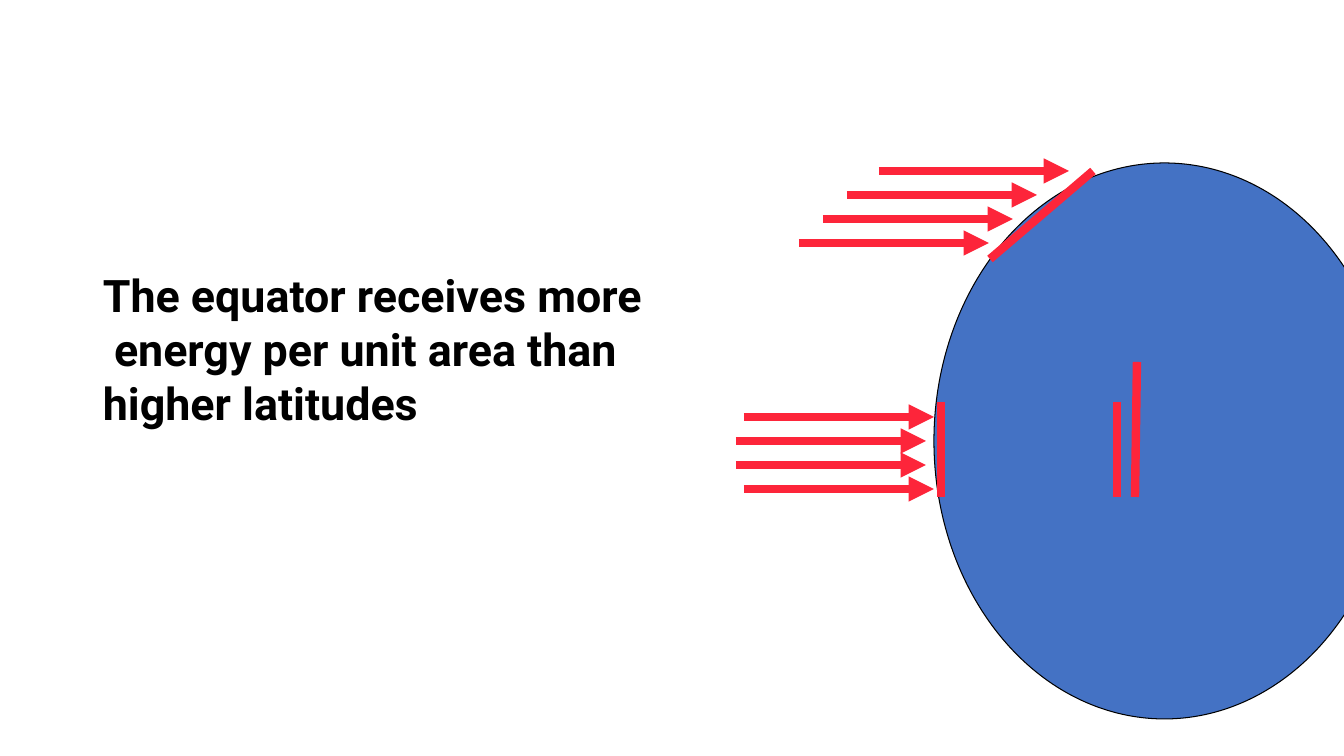
from dataclasses import dataclass

from lxml.etree import SubElement
from pptx import Presentation
from pptx.dml.color import RGBColor
from pptx.enum.shapes import MSO_CONNECTOR, MSO_SHAPE
from pptx.enum.text import MSO_AUTO_SIZE
from pptx.oxml.ns import qn
from pptx.util import Emu, Pt


@dataclass(frozen=True)
class Theme:
    font: str = "Roboto"
    statement_size: int = 32
    text: RGBColor = RGBColor(0, 0, 0)
    earth: RGBColor = RGBColor(0x44, 0x72, 0xC4)
    sunlight: RGBColor = RGBColor(0xFD, 0x25, 0x3A)
    outline_width: float = 0.75
    ray_width: float = 6


def px(value):
    return Emu(round(value * 914400 / 100.8))


class SlideBuilder:
    def __init__(self, slide, theme):
        self.slide = slide
        self.theme = theme

    def ellipse(self, left, top, width, height):
        shape = self.slide.shapes.add_shape(
            MSO_SHAPE.OVAL, px(left), px(top), px(width), px(height))
        shape.shadow.inherit = False
        shape.fill.solid()
        shape.fill.fore_color.rgb = self.theme.earth
        shape.line.color.rgb = self.theme.text
        shape.line.width = Pt(self.theme.outline_width)

    def statement(self, left, top, width, height, lines):
        shape = self.slide.shapes.add_textbox(
            px(left), px(top), px(width), px(height))
        text_frame = shape.text_frame
        text_frame.text = "\n".join(lines)
        text_frame.word_wrap = False
        text_frame.auto_size = MSO_AUTO_SIZE.SHAPE_TO_FIT_TEXT
        for paragraph in text_frame.paragraphs:
            for run in paragraph.runs:
                run.font.name = self.theme.font
                run.font.size = Pt(self.theme.statement_size)
                run.font.bold = True
                run.font.color.rgb = self.theme.text

    def line(self, start_x, start_y, end_x, end_y, arrow=False):
        connector = self.slide.shapes.add_connector(
            MSO_CONNECTOR.STRAIGHT,
            px(start_x), px(start_y), px(end_x), px(end_y))
        connector.line.color.rgb = self.theme.sunlight
        connector.line.width = Pt(self.theme.ray_width)
        if arrow:
            SubElement(connector.line._get_or_add_ln(),
                       qn("a:tailEnd"), type="triangle")
        SubElement(connector._element.spPr, qn("a:effectLst"))

    def rays(self, top, starts, length=190, spacing=24):
        for row, start in enumerate(starts):
            y = top + row * spacing
            self.line(start, y, start + length, y, arrow=True)


def main():
    presentation = Presentation()
    presentation.slide_width = px(1344)
    presentation.slide_height = px(756)
    blank_layout = presentation.slide_layouts[6]
    builder = SlideBuilder(presentation.slides.add_slide(blank_layout), Theme())

    # Earth and statement
    builder.ellipse(934, 163, 461, 556)
    builder.statement(93, 263, 626, 173, [
        "The equator receives more",
        " energy per unit area than",
        "higher latitudes",
    ])

    # Sunlight reaching the equator and the higher latitudes
    builder.rays(417, [744, 736, 736, 744])
    builder.rays(171, [879, 847, 823, 799])

    # Lit surface at high latitude, then both lengths side by side
    builder.line(1093, 171, 990, 259)
    builder.line(1117, 402, 1117, 497)
    builder.line(1137, 362, 1135, 497)

    # Lit surface at the equator
    builder.line(941, 402, 941, 497)

    presentation.save("out.pptx")


if __name__ == "__main__":
    main()
